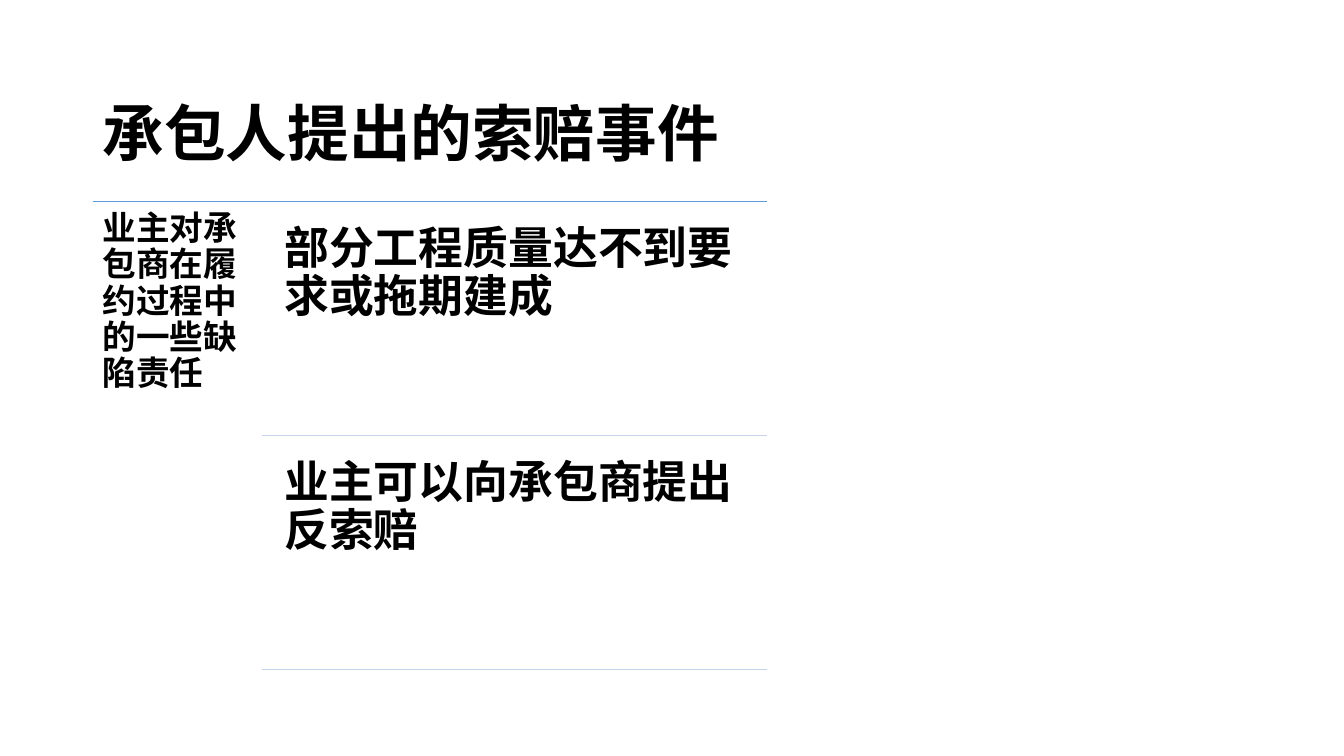
import pptx
import pptx.dml.color
import pptx.enum.shapes
import pptx.enum.text
import pptx.util
from lxml import etree

PX = 9144  # 100 px to the inch
FONT = "Times New Roman"
BLACK = pptx.dml.color.RGBColor(0x00, 0x00, 0x00)
BLUE = pptx.dml.color.RGBColor(0x5B, 0x9B, 0xD5)
PALE_BLUE = pptx.dml.color.RGBColor(0xC4, 0xD5, 0xEB)

TITLE = "承包人提出的索赔事件"
CAUSE = "业主对承包商在履约过程中的一些缺陷责任"
CLAIMS = ["部分工程质量达不到要求或拖期建成", "业主可以向承包商提出反索赔"]


def add_label(slide, box, words, size, inset, spacing=0.9,
              anchor=pptx.enum.text.MSO_ANCHOR.TOP):
    label = slide.shapes.add_textbox(*(length * PX for length in box))
    frame = label.text_frame
    frame.word_wrap = True
    frame.vertical_anchor = anchor
    frame.margin_left = frame.margin_right = inset * PX
    frame.margin_top = frame.margin_bottom = inset * PX
    paragraph = frame.paragraphs[0]
    paragraph.line_spacing = spacing
    run = paragraph.add_run()
    run.text = words
    run.font.name = FONT
    run.font.size = pptx.util.Pt(size)
    run.font.bold = True
    run.font.color.rgb = BLACK


def add_rule(slide, left, right, y, color):
    """Draw a horizontal line without a shadow."""
    rule = slide.shapes.add_connector(
        pptx.enum.shapes.MSO_CONNECTOR.STRAIGHT,
        left * PX, y * PX, right * PX, y * PX)
    rule.line.color.rgb = color
    rule.line.width = pptx.util.Pt(1)
    etree.SubElement(rule._element.spPr, pptx.oxml.ns.qn("a:effectLst"))


def add_title(slide, box):
    add_label(slide, box, TITLE, 44, 10, spacing=1.5,
              anchor=pptx.enum.text.MSO_ANCHOR.MIDDLE)


def add_claim_list(slide, box):
    """Place the cause at the left and the ruled claims at the right."""
    left, top, width, height = box
    right = left + width
    cause_width, gap, text_indent = 168, 11, 9
    claims_left = left + cause_width
    text_left = claims_left + text_indent
    claim_height = (height - gap * (len(CLAIMS) + 1)) // len(CLAIMS)

    add_rule(slide, left, right, top, BLUE)
    add_label(slide, (left, top, cause_width, height), CAUSE, 24, 10)
    for row, claim in enumerate(CLAIMS):
        claim_top = top + gap + row * (claim_height + gap)
        add_label(slide, (text_left, claim_top, right - text_left, claim_height),
                  claim, 32, 13)
        add_rule(slide, claims_left, right, claim_top + claim_height, PALE_BLUE)


def main():
    deck = pptx.Presentation()
    deck.slide_width = 1333 * PX
    deck.slide_height = 750 * PX
    slide = deck.slides.add_slide(deck.slide_layouts[6])
    add_title(slide, (92, 40, 1150, 145))
    add_claim_list(slide, (92, 200, 669, 476))
    deck.save("out.pptx")


if __name__ == "__main__":
    main()
